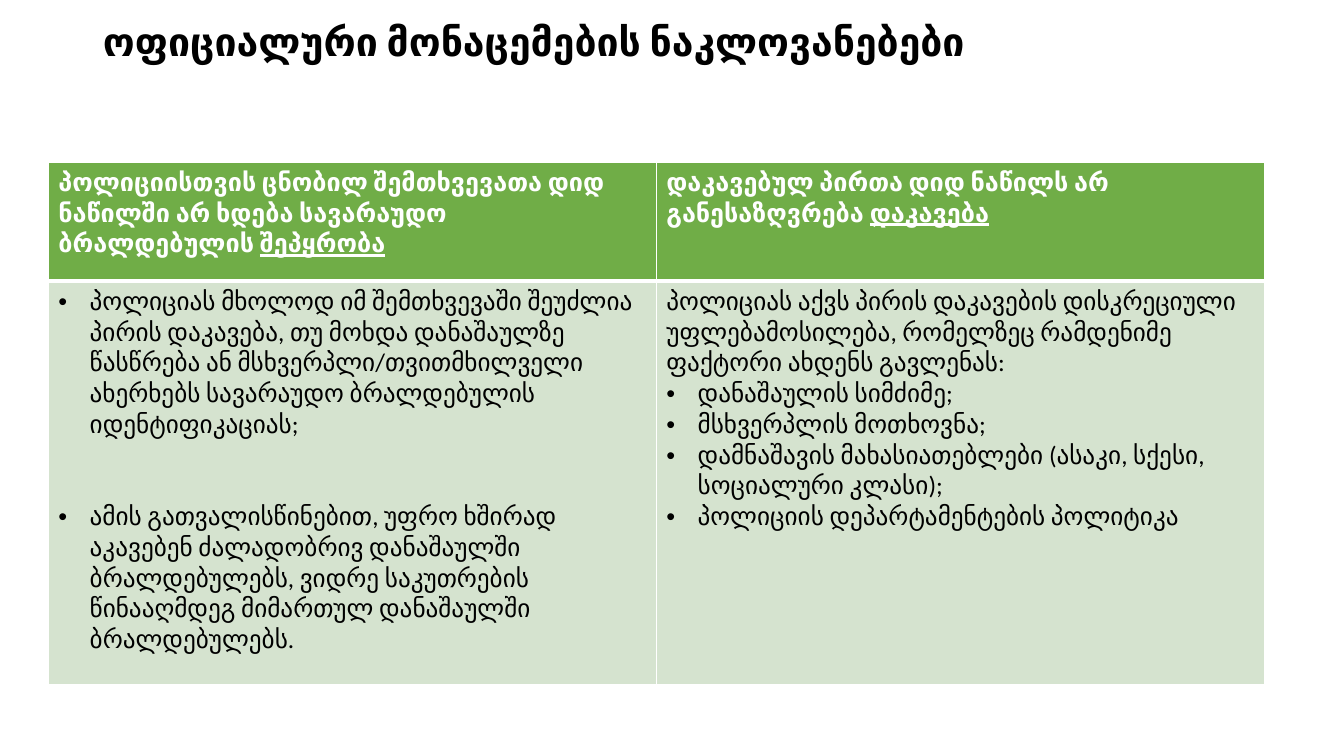
from lxml.etree import SubElement
from pptx import Presentation
from pptx.dml.color import RGBColor
from pptx.enum.text import MSO_ANCHOR, MSO_AUTO_SIZE, PP_ALIGN
from pptx.oxml.ns import qn
from pptx.util import Inches, Pt

COLORS = {"text": "000000", "light": "FFFFFF", "header": "70AD47", "body": "D5E3CF"}
FONT = "Calibri"
INDENT = Inches(0.31)
SECTION_GAP = Pt(44)  # two lines of body text

TITLE = "ოფიციალური მონაცემების ნაკლოვანებები"
# Each heading: plain beginning, underlined last word
HEADINGS = [
    ("პოლიციისთვის ცნობილ შემთხვევათა დიდ ნაწილში არ ხდება სავარაუდო ბრალდებულის ", "შეპყრობა"),
    ("დაკავებულ პირთა დიდ ნაწილს არ განესაზღვრება ", "დაკავება"),
]
# Each body line: text, bulleted, space before
BODIES = [
    [
        ("პოლიციას მხოლოდ იმ შემთხვევაში შეუძლია პირის დაკავება, თუ მოხდა დანაშაულზე წასწრება ან "
         "მსხვერპლი/თვითმხილველი ახერხებს სავარაუდო ბრალდებულის იდენტიფიკაციას;", True, 0),
        ("ამის გათვალისწინებით, უფრო ხშირად აკავებენ ძალადობრივ დანაშაულში ბრალდებულებს, ვიდრე "
         "საკუთრების წინააღმდეგ მიმართულ დანაშაულში ბრალდებულებს.", True, SECTION_GAP),
    ],
    [
        ("პოლიციას აქვს პირის დაკავების დისკრეციული უფლებამოსილება, რომელზეც რამდენიმე ფაქტორი "
         "ახდენს გავლენას:", False, 0),
        ("დანაშაულის სიმძიმე;", True, 0),
        ("მსხვერპლის მოთხოვნა;", True, 0),
        ("დამნაშავის მახასიათებლები (ასაკი, სქესი, სოციალური კლასი);", True, 0),
        ("პოლიციის დეპარტამენტების პოლიტიკა", True, 0),
    ],
]


def style_runs(paragraph, size, color, bold):
    for run in paragraph.runs:
        run.font.name = FONT
        run.font.size = Pt(size)
        run.font.bold = bold
        run.font.color.rgb = RGBColor.from_string(COLORS[color])


def add_bullet(paragraph):
    properties = paragraph._p.get_or_add_pPr()
    properties.set("marL", str(INDENT))
    properties.set("indent", str(-INDENT))
    SubElement(properties, qn("a:buFont"), typeface="Arial")
    SubElement(properties, qn("a:buChar"), char="•")


def style_cell(cell, fill, top, bottom):
    """Draw the cell's white borders, then its fill."""
    properties = cell._tc.get_or_add_tcPr()
    for side, width in (("lnL", 1), ("lnR", 1), ("lnT", top), ("lnB", bottom)):
        border = SubElement(properties, qn(f"a:{side}"), w=str(Pt(width)))
        border_fill = SubElement(border, qn("a:solidFill"))
        SubElement(border_fill, qn("a:srgbClr"), val=COLORS["light"])
    cell.fill.solid()
    cell.fill.fore_color.rgb = RGBColor.from_string(COLORS[fill])


def fill_heading(cell, lead, key_word):
    style_cell(cell, "header", top=1, bottom=3)
    heading = cell.text_frame.paragraphs[0]
    heading.text = lead
    underlined = heading.add_run()
    underlined.text = key_word
    underlined.font.underline = True
    style_runs(heading, 18, "light", True)


def fill_body(cell, lines):
    style_cell(cell, "body", top=3, bottom=1)
    cell.text_frame.text = "\n".join(text for text, _, _ in lines)
    for paragraph, (_, bulleted, gap) in zip(cell.text_frame.paragraphs, lines):
        if gap:
            paragraph.space_before = gap
        if bulleted:
            add_bullet(paragraph)
        style_runs(paragraph, 18, "text", False)


def place_title(slide, left, top, width, height):
    title = slide.shapes.title
    title.left, title.top, title.width, title.height = left, top, width, height
    frame = title.text_frame
    frame.text = TITLE
    frame.auto_size = MSO_AUTO_SIZE.NONE
    frame.vertical_anchor = MSO_ANCHOR.MIDDLE
    paragraph = frame.paragraphs[0]
    paragraph.alignment = PP_ALIGN.LEFT
    paragraph.line_spacing = 0.9
    style_runs(paragraph, 28, "text", True)


def place_comparison(slide, left, top, width, height):
    table = slide.shapes.add_table(2, len(HEADINGS), left, top, width, height).table
    table.rows[0].height = Inches(1.18)
    table.rows[1].height = height - table.rows[0].height
    for column, (heading, body) in enumerate(zip(HEADINGS, BODIES)):
        fill_heading(table.cell(0, column), *heading)
        fill_body(table.cell(1, column), body)


def main():
    deck = Presentation()
    deck.slide_width, deck.slide_height = Inches(13.33), Inches(7.5)
    slide = deck.slides.add_slide(deck.slide_layouts[5])
    place_title(slide, Inches(0.92), Inches(0.16), Inches(11.5), Inches(0.54))
    place_comparison(slide, Inches(0.48), Inches(1.61), Inches(12.06), Inches(5.18))
    deck.save("out.pptx")


if __name__ == "__main__":
    main()
